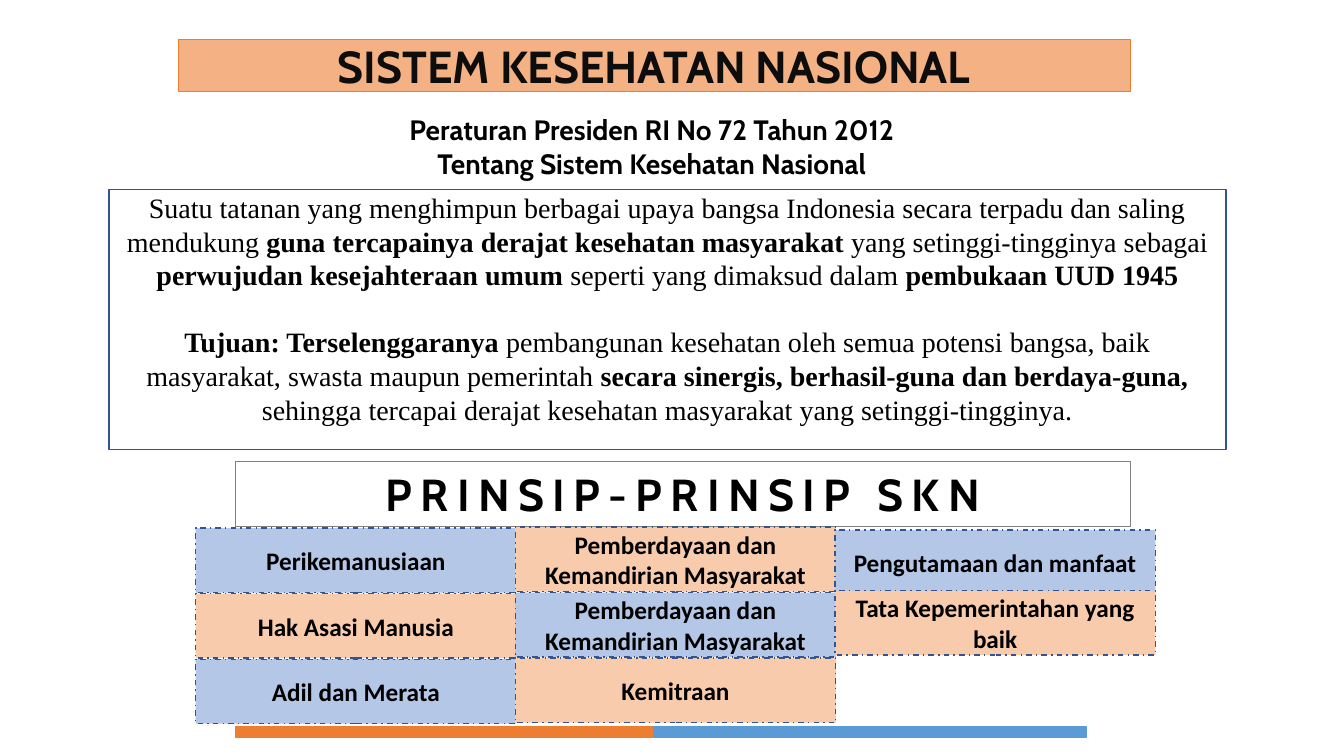
from dataclasses import dataclass

from pptx import Presentation
from pptx.dml.color import RGBColor
from pptx.enum.dml import MSO_LINE_DASH_STYLE as Dash
from pptx.enum.shapes import MSO_SHAPE as Preset
from pptx.enum.text import MSO_ANCHOR as Anchor, MSO_AUTO_SIZE as AutoSize, PP_ALIGN as Align
from pptx.util import Emu, Pt

EMU_PER_PX = 9144


@dataclass(frozen=True)
class Theme:
    white: str = "FFFFFF"
    black: str = "000000"
    ink: str = "0D0D0D"
    orange: str = "ED7D31"
    blue: str = "5B9BD5"
    navy: str = "325491"
    grey: str = "808080"
    title_fill: str = "F4B183"
    pale_blue: str = "B4C7E7"
    pale_orange: str = "F8CBAD"
    heading_font: str = "Cabin"
    body_font: str = "Times New Roman"
    label_font: str = "Calibri"
    heading_size: int = 32
    body_size: int = 20
    label_size: int = 18


THEME = Theme()

DEFINITION = [
    [
        ("Suatu tatanan yang menghimpun berbagai upaya bangsa Indonesia secara terpadu dan saling mendukung ", False),
        ("guna tercapainya derajat kesehatan masyarakat ", True),
        ("yang setinggi-tingginya sebagai ", False),
        ("perwujudan kesejahteraan umum ", True),
        ("seperti yang dimaksud dalam ", False),
        ("pembukaan UUD 1945", True),
    ],
    [
        ("Tujuan: Terselenggaranya ", True),
        ("pembangunan kesehatan oleh semua potensi bangsa, baik masyarakat, swasta maupun pemerintah ", False),
        ("secara sinergis, berhasil-guna dan berdaya-guna, ", True),
        ("sehingga tercapai derajat kesehatan masyarakat yang setinggi-tingginya.", False),
    ],
]

PRINCIPLES = [
    (524, 65, ["Perikemanusiaan", "Hak Asasi Manusia", "Adil dan Merata"]),
    (523, 65, ["Pemberdayaan dan Kemandirian Masyarakat",
               "Pemberdayaan dan Kemandirian Masyarakat", "Kemitraan"]),
    (526, 60, ["Pengutamaan dan manfaat", "Tata Kepemerintahan yang baik"]),
]


def px(length):
    return Emu(length * EMU_PER_PX)


def place(shape, box):
    shape.left, shape.top, shape.width, shape.height = map(px, box)


def paint(shape, fill, line, weight=1, dash=None):
    shape.fill.solid()
    shape.fill.fore_color.rgb = RGBColor.from_string(fill)
    shape.line.color.rgb = RGBColor.from_string(line)
    shape.line.width = Pt(weight)
    if dash:
        shape.line.dash_style = dash


def add_panel(slide, box, fill, line, **style):
    panel = slide.shapes.add_shape(Preset.RECTANGLE, *map(px, box))
    panel.shadow.inherit = False
    paint(panel, fill, line, **style)
    return panel


def write(shape, paragraphs, *, font, size, color=THEME.black, anchor=Anchor.MIDDLE,
          inset=0, gap=0, spacing=0):
    frame = shape.text_frame
    frame.word_wrap = True
    frame.auto_size = AutoSize.NONE
    frame.vertical_anchor = anchor
    frame.margin_top = frame.margin_bottom = px(inset)
    for index, spans in enumerate(paragraphs):
        para = frame.add_paragraph() if index else frame.paragraphs[0]
        para.alignment = Align.CENTER
        if index:
            para.space_before = Pt(gap)
        for text, bold in spans:
            span = para.add_run()
            span.text = text
            span.font.name = font
            span.font.size = Pt(size)
            span.font.bold = bold
            span.font.color.rgb = RGBColor.from_string(color)
            if spacing:
                span.font._element.set("spc", str(spacing * 100))


def add_footer(slide, box):
    left, top, width, height = box
    split = 414
    add_panel(slide, (left, top, split, height), THEME.orange, THEME.orange)
    add_panel(slide, (left + split, top, width - split, height), THEME.blue, THEME.blue)


def add_title(slide, box):
    title = slide.shapes.title
    place(title, box)
    paint(title, THEME.title_fill, THEME.orange)
    write(title, [[("SISTEM KESEHATAN NASIONAL", True)]], font=THEME.heading_font,
          size=THEME.heading_size, color=THEME.ink)


def add_regulation(slide, box):
    regulation = slide.shapes.add_textbox(*map(px, box))
    lines = ["Peraturan Presiden RI No 72 Tahun 2012", "Tentang Sistem Kesehatan Nasional"]
    write(regulation, [[(line, True)] for line in lines], font=THEME.heading_font,
          size=THEME.body_size, anchor=Anchor.TOP, inset=5)


def add_definition(slide, box):
    panel = add_panel(slide, box, THEME.white, THEME.navy)
    write(panel, DEFINITION, font=THEME.body_font, size=THEME.body_size,
          anchor=Anchor.TOP, inset=1, gap=24)


def add_principles_heading(slide, box):
    panel = add_panel(slide, box, THEME.white, THEME.grey, weight=0.75)
    write(panel, [[("PRINSIP-PRINSIP SKN", True)]], font=THEME.heading_font,
          size=THEME.heading_size, anchor=Anchor.TOP, inset=5, spacing=6)


def add_principles(slide, left, column_step, cell_width, cell_height):
    fills = (THEME.pale_blue, THEME.pale_orange)
    for column, (top, row_step, labels) in enumerate(PRINCIPLES):
        for row, label in enumerate(labels):
            box = (left + column * column_step, top + row * row_step, cell_width, cell_height)
            cell = add_panel(slide, box, fills[(row + column) % 2], THEME.navy, dash=Dash.DASH_DOT)
            write(cell, [[(label, True)]], font=THEME.label_font, size=THEME.label_size)


def main():
    deck = Presentation()
    deck.slide_width, deck.slide_height = px(1333), px(750)
    page = deck.slides.add_slide(deck.slide_layouts[5])
    add_footer(page, (234, 721, 843, 11))
    add_title(page, (177, 39, 944, 52))
    add_definition(page, (108, 188, 1108, 258))
    add_regulation(page, (313, 107, 667, 77))
    add_principles_heading(page, (234, 458, 887, 64))
    add_principles(page, left=194, column_step=317, cell_width=318, cell_height=64)
    deck.save("out.pptx")


if __name__ == "__main__":
    main()
